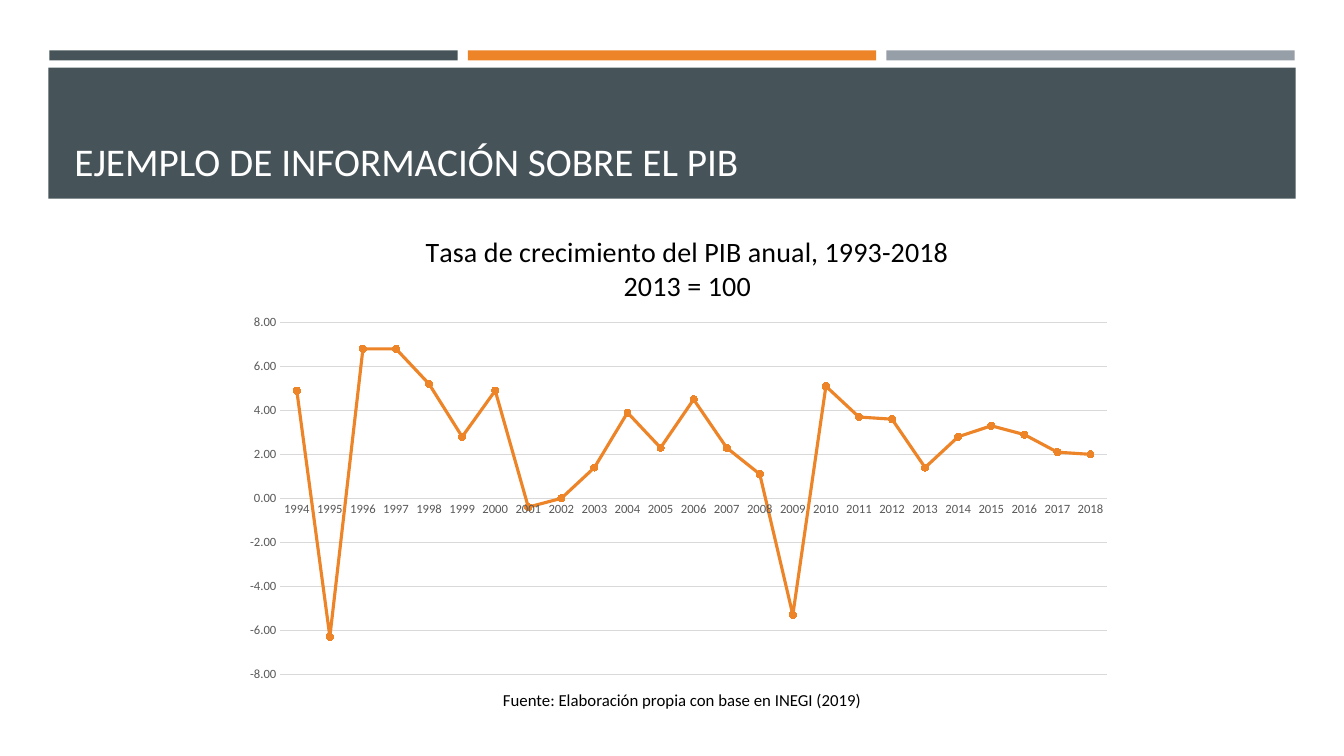
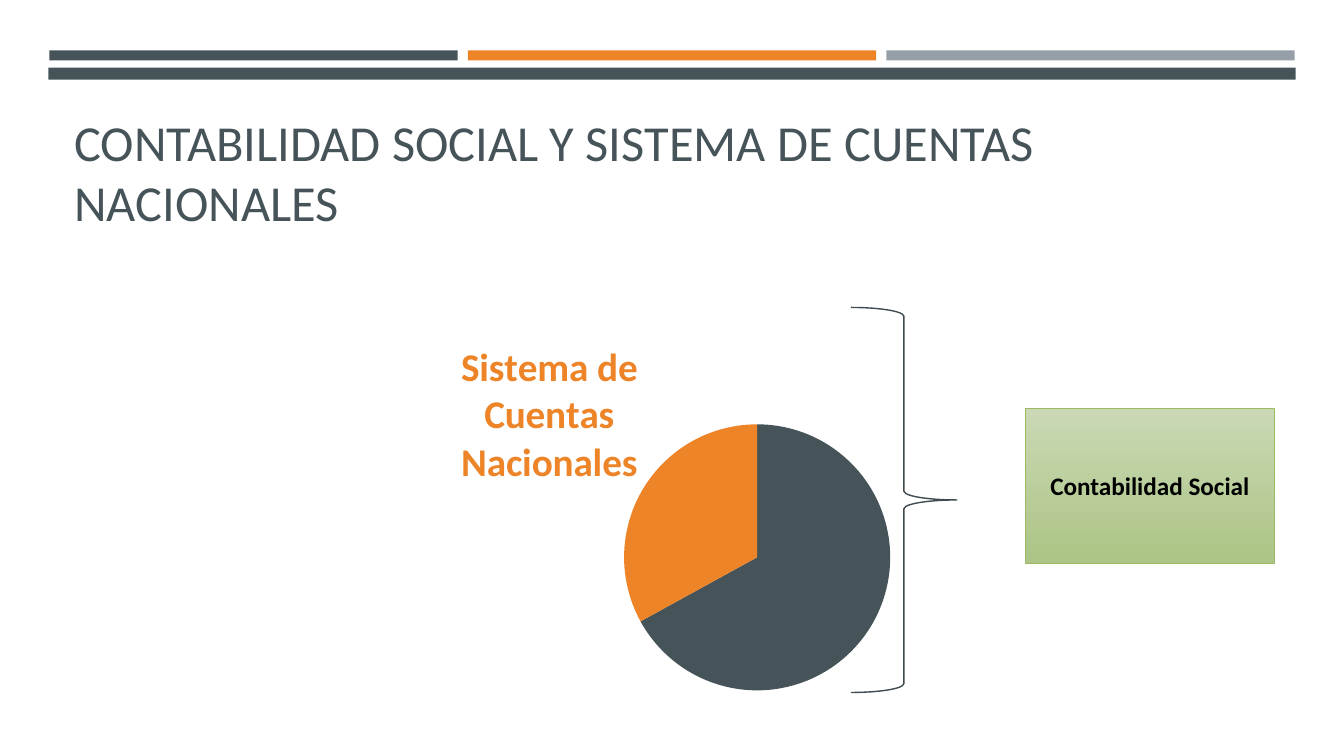
from lxml import etree
from pptx import Presentation
from pptx import util as u
from pptx.chart.data import CategoryChartData
from pptx.dml.color import RGBColor
from pptx.enum import chart as charts, shapes, text
from pptx.oxml import parse_xml
from pptx.oxml.ns import nsdecls

PX = 9144  # EMU; 100 px to the inch
FONT = "Calibri"
SLATE, ORANGE, GRAY, WHITE, BLACK = "465359", "ED8428", "969FA7", "FFFFFF", "000000"
GRID, AXIS_TEXT, BRACE_LINE = "D9D9D9", "595959", "3F4B50"
GREEN_TOP, GREEN_BOTTOM, GREEN_LINE = "CAD9B4", "ACC485", "9BB966"

STRIPES = [SLATE, ORANGE, GRAY]

GROWTH = {
    "heading": "EJEMPLO DE INFORMACIÓN SOBRE EL PIB",
    "chart_title": ["Tasa de crecimiento del PIB anual, 1993-2018", "2013 = 100"],
    "first_year": 1994,
    "rates": [4.9, -6.3, 6.8, 6.8, 5.2, 2.8, 4.9, -0.4, 0, 1.4, 3.9, 2.3, 4.5,
              2.3, 1.1, -5.3, 5.1, 3.7, 3.6, 1.4, 2.8, 3.3, 2.9, 2.1, 2],
    "source": "Fuente: Elaboración propia con base en INEGI (2019)",
}
ACCOUNTS = {
    "heading": "CONTABILIDAD SOCIAL Y SISTEMA DE CUENTAS NACIONALES",
    "shares": [("Contabilidad Social", 67, SLATE),
               ("Sistema de Cuentas Nacionales", 33, ORANGE)],
    "result": "Contabilidad Social",
}


def color(value):
    return RGBColor.from_string(value)


def emu(*lengths):
    return [u.Emu(length * PX) for length in lengths]


def set_font(font, size, shade, bold=False):
    font.name, font.size, font.bold = FONT, u.Pt(size), bold
    font.color.rgb = color(shade)


def set_line(line, shade, width):
    line.color.rgb = color(shade)
    line.width = u.Pt(width)


def add_shape(page, kind, box, fill=None):
    shape = page.shapes.add_shape(kind, *emu(*box))
    shape.shadow.inherit = False
    shape.line.fill.background()
    if fill:
        shape.fill.solid()
        shape.fill.fore_color.rgb = color(fill)
    else:
        shape.fill.background()
    return shape


def write(shape, words, size, shade, bold=False, align=text.PP_ALIGN.LEFT,
          anchor=text.MSO_ANCHOR.TOP):
    frame = shape.text_frame
    frame.word_wrap = True
    frame.vertical_anchor = anchor
    para = frame.paragraphs[0]
    para.text, para.alignment = words, align
    set_font(para.font, size, shade, bold)


def add_text(page, box, words, size, shade, **style):
    write(page.shapes.add_textbox(*emu(*box)), words, size, shade, **style)


def add_page(deck, heading, band_height, heading_box, size, shade):
    """Add a slide with the three stripes, the band and the heading."""
    page = deck.slides.add_slide(deck.slide_layouts[6])
    width, gap = 405, 10
    for i, stripe in enumerate(STRIPES):
        add_shape(page, shapes.MSO_SHAPE.RECTANGLE,
                  (49 + i * (width + gap), 50, width, 10), stripe)
    add_shape(page, shapes.MSO_SHAPE.RECTANGLE, (48, 67, 1237, band_height), SLATE)
    add_text(page, heading_box, heading, size, shade, anchor=text.MSO_ANCHOR.BOTTOM)
    return page


def add_chart(page, kind, box, categories, values):
    data = CategoryChartData()
    data.categories = categories
    data.add_series("Series 1", values)
    chart = page.shapes.add_chart(kind, *emu(*box), data).chart
    set_font(chart.font, 10, BLACK)
    chart.has_legend = False
    chart.has_title = False
    return chart


def place(part, chart_box, box, inner=False):
    """Fix a chart part at a page position; a title takes only left and top."""
    left, top, width, height = chart_box
    fractions = [("x", (box[0] - left) / width), ("y", (box[1] - top) / height)]
    if inner:
        fractions += [("w", box[2] / width), ("h", box[3] / height)]
    settings = [("layoutTarget", "inner")] if inner else []
    settings += [("xMode", "edge"), ("yMode", "edge")]
    settings += [(name, f"{value:.4f}") for name, value in fractions]
    items = "".join(f'<c:{name} val="{value}"/>' for name, value in settings)
    layout = parse_xml(f'<c:layout {nsdecls("c")}><c:manualLayout>{items}'
                       '</c:manualLayout></c:layout>')
    for old in part.xpath("c:layout"):
        part.remove(old)
    before = part.xpath("c:tx")
    if before:
        before[0].addnext(layout)
    else:
        part.insert(0, layout)


def plot_area(chart):
    return chart.element.xpath("c:chart/c:plotArea")[0]


def style_axes(chart):
    for axis in (chart.category_axis, chart.value_axis):
        axis.major_tick_mark = axis.minor_tick_mark = charts.XL_TICK_MARK.NONE
        set_font(axis.tick_labels.font, 9, AXIS_TEXT)
    set_line(chart.category_axis.format.line, GRID, 0.75)
    rates = chart.value_axis
    rates.minimum_scale, rates.maximum_scale, rates.major_unit = -8, 8, 2
    rates.format.line.fill.background()
    rates.has_major_gridlines = True
    set_line(rates.major_gridlines.format.line, GRID, 0.75)
    rates.tick_labels.number_format = "0.00"
    rates.tick_labels.number_format_is_linked = False


def title_chart(chart, lines):
    chart.has_title = True
    frame = chart.chart_title.text_frame
    for i, line in enumerate(lines):
        para = frame.add_paragraph() if i else frame.paragraphs[0]
        para.text = line
        para.alignment = text.PP_ALIGN.CENTER
        set_font(para.font, 20, BLACK)
    chart.chart_title.include_in_layout = False


def build_growth(deck):
    page = add_page(deck, GROWTH["heading"], 130, (64, 77, 1206, 111), 28, WHITE)
    box = (230, 211, 887, 476)
    first, rates = GROWTH["first_year"], GROWTH["rates"]
    years = [str(first + i) for i in range(len(rates))]
    chart = add_chart(page, charts.XL_CHART_TYPE.LINE_MARKERS_STACKED, box, years, rates)
    title_chart(chart, GROWTH["chart_title"])
    place(chart.element.xpath("c:chart/c:title")[0], box, (419, 228))
    place(plot_area(chart), box, (278, 320, 820, 349), inner=True)
    style_axes(chart)

    chart.plots[0].vary_by_categories = False
    series = chart.plots[0].series[0]
    series.smooth = False
    set_line(series.format.line, ORANGE, 2.25)
    marker = series.marker
    marker.style, marker.size = charts.XL_MARKER_STYLE.CIRCLE, 5
    marker.format.fill.solid()
    marker.format.fill.fore_color.rgb = color(ORANGE)
    set_line(marker.format.line, ORANGE, 0.75)

    add_text(page, (489, 679, 412, 30), GROWTH["source"], 12, BLACK)


def label_with_category(series, index, shade):
    """Show the category name beside one slice only."""
    label = series.points[index].data_label
    set_font(label.font, 28, shade, bold=True)
    label.position = charts.XL_LABEL_POSITION.OUTSIDE_END
    labels = series._element.xpath("c:dLbls")[0]
    for flag in labels.xpath(".//c:showVal"):
        flag.set("val", "0")
    for flag in labels.xpath("c:dLbl/c:showCatName"):
        flag.set("val", "1")


def build_accounts(deck):
    page = add_page(deck, ACCOUNTS["heading"], 12, (64, 79, 1202, 156), 36, SLATE)
    box = (69, 305, 1194, 394)
    names, values, shades = zip(*ACCOUNTS["shares"])
    chart = add_chart(page, charts.XL_CHART_TYPE.PIE, box, names, values)
    place(plot_area(chart), box, (619, 421, 264, 264), inner=True)
    chart.plots[0].vary_by_categories = True
    series = chart.plots[0].series[0]
    for i, shade in enumerate(shades):
        fill = series.points[i].format.fill
        fill.solid()
        fill.fore_color.rgb = color(shade)
    label_with_category(series, 1, ORANGE)

    brace = add_shape(page, shapes.MSO_SHAPE.RIGHT_BRACE, (844, 305, 105, 382))
    set_line(brace.line, BRACE_LINE, 1)

    result = add_shape(page, shapes.MSO_SHAPE.RECTANGLE, (1017, 405, 247, 154))
    result.fill.gradient()
    result.fill.gradient_angle = 270
    for stop, shade in zip(result.fill.gradient_stops, (GREEN_TOP, GREEN_BOTTOM)):
        stop.color.rgb = color(shade)
    set_line(result.line, GREEN_LINE, 1)
    write(result, ACCOUNTS["result"], 18, BLACK, bold=True,
          align=text.PP_ALIGN.CENTER, anchor=text.MSO_ANCHOR.MIDDLE)


def main():
    deck = Presentation()
    deck.slide_width, deck.slide_height = emu(1333, 750)
    build_growth(deck)
    build_accounts(deck)
    deck.save("out.pptx")


if __name__ == "__main__":
    main()
